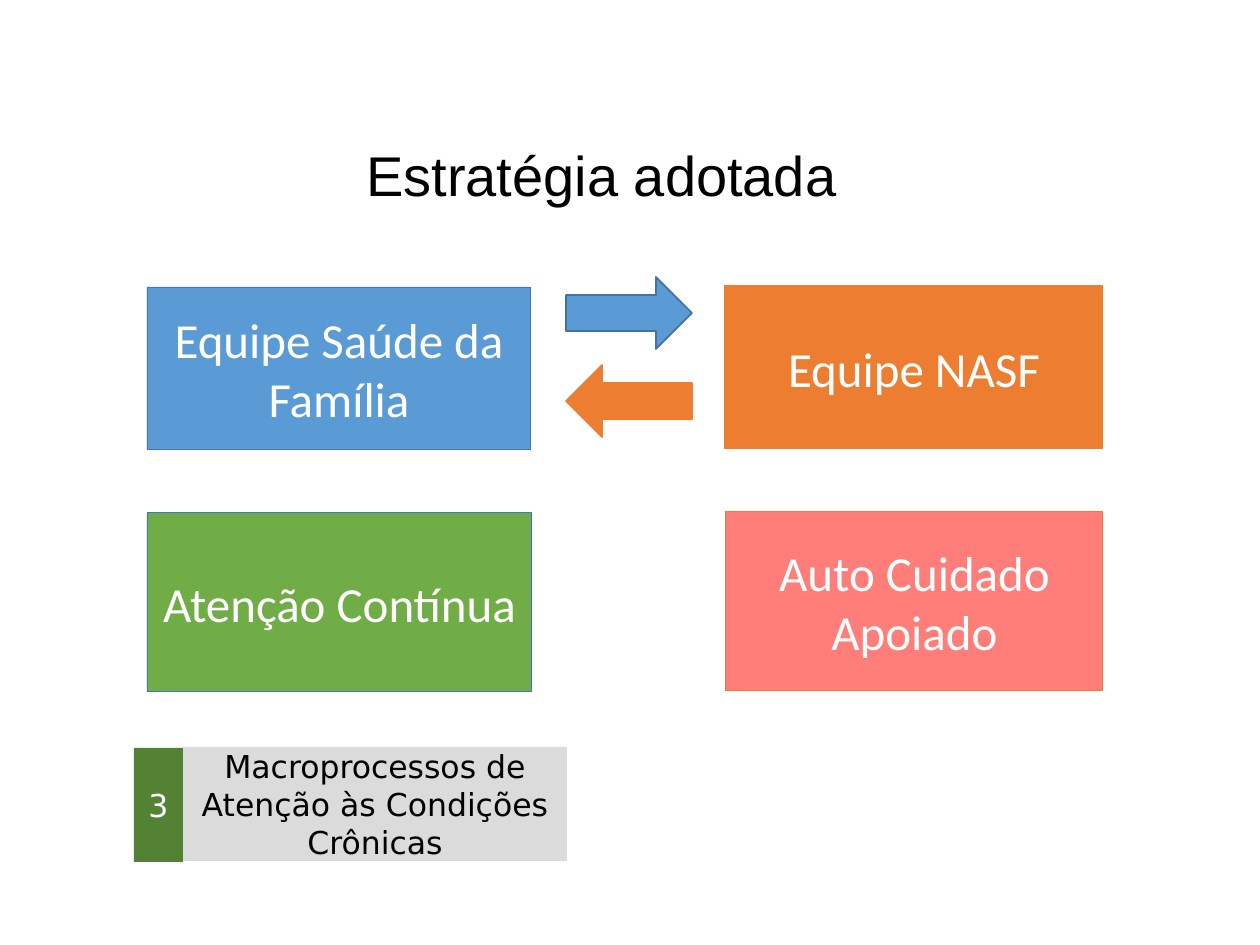
from pptx import Presentation
from pptx.dml.color import RGBColor
from pptx.enum.shapes import MSO_SHAPE as Kind
from pptx.enum.text import MSO_ANCHOR as Anchor, PP_ALIGN as Align
from pptx.util import Emu, Pt

SCALE = 914400 / 126
COLORS = {
    "white": "FFFFFF", "black": "000000", "blue": "5B9BD5", "edge": "4472C4",
    "navy": "43739E", "orange": "ED7D31", "green": "70AD47",
    "pink": "FF7E79", "gray": "DBDBDB", "moss": "548235",
}
TITLE = {"name": "Arial", "size": Pt(32)}
TEAM = {"name": "Calibri", "size": Pt(28)}
LABEL = {"name": "DejaVu Sans", "size": Pt(18)}

BOXES = [
    ("Equipe Saúde da Família", (147, 287, 384, 163), "blue", "edge"),
    ("Equipe NASF", (725, 286, 378, 163), "orange", "orange"),
    ("Atenção Contínua", (147, 513, 385, 179), "green", "edge"),
    ("Auto Cuidado Apoiado", (726, 512, 377, 179), "pink", "orange"),
]
ARROWS = [(277, 0, "blue", "navy"), (365, 180, "orange", "orange")]
TAGS = [
    ("Macroprocessos de Atenção às Condições Crônicas",
     (183, 747, 384, 114), "gray", "black"),
    ("3", (134, 748, 49, 114), "moss", "white"),
]


def px(count):
    return Emu(round(count * SCALE))


def color(name):
    return RGBColor.from_string(COLORS[name])


def write(shape, text, style, ink, align):
    para = shape.text_frame.paragraphs[0]
    para.alignment = align
    run = para.add_run()
    run.text = text
    for key, value in style.items():
        setattr(run.font, key, value)
    run.font.color.rgb = color(ink)


def add_shape(slide, kind, box, fill, line=None, width=0.5):
    shape = slide.shapes.add_shape(kind, *map(px, box))
    shape.shadow.inherit = False
    shape.fill.solid()
    shape.fill.fore_color.rgb = color(fill)
    if line:
        shape.line.color.rgb = color(line)
        shape.line.width = Pt(width)
    else:
        shape.line.fill.background()
    return shape


def add_box(slide, text, box, fill, style, ink="white", line=None):
    shape = add_shape(slide, Kind.RECTANGLE, box, fill, line)
    shape.text_frame.word_wrap = True
    shape.text_frame.vertical_anchor = Anchor.MIDDLE
    write(shape, text, style, ink, Align.CENTER)


def add_arrow(slide, top, turn, fill, line):
    shape = add_shape(slide, Kind.RIGHT_ARROW, (566, top, 126, 72),
                      fill, line, 1)
    shape.rotation = turn


def add_title(slide, text, box):
    shape = slide.shapes.add_textbox(*map(px, box))
    shape.text_frame.word_wrap = False
    write(shape, text, TITLE, "black", Align.LEFT)


def main():
    deck = Presentation()
    deck.slide_width, deck.slide_height = px(1260), px(945)
    slide = deck.slides.add_slide(deck.slide_layouts[6])
    add_title(slide, "Estratégia adotada", (354, 134, 499, 81))
    for text, box, fill, line in BOXES:
        add_box(slide, text, box, fill, TEAM, line=line)
    for arrow in ARROWS:
        add_arrow(slide, *arrow)
    for text, box, fill, ink in TAGS:
        add_box(slide, text, box, fill, LABEL, ink)
    deck.save("out.pptx")


if __name__ == "__main__":
    main()
